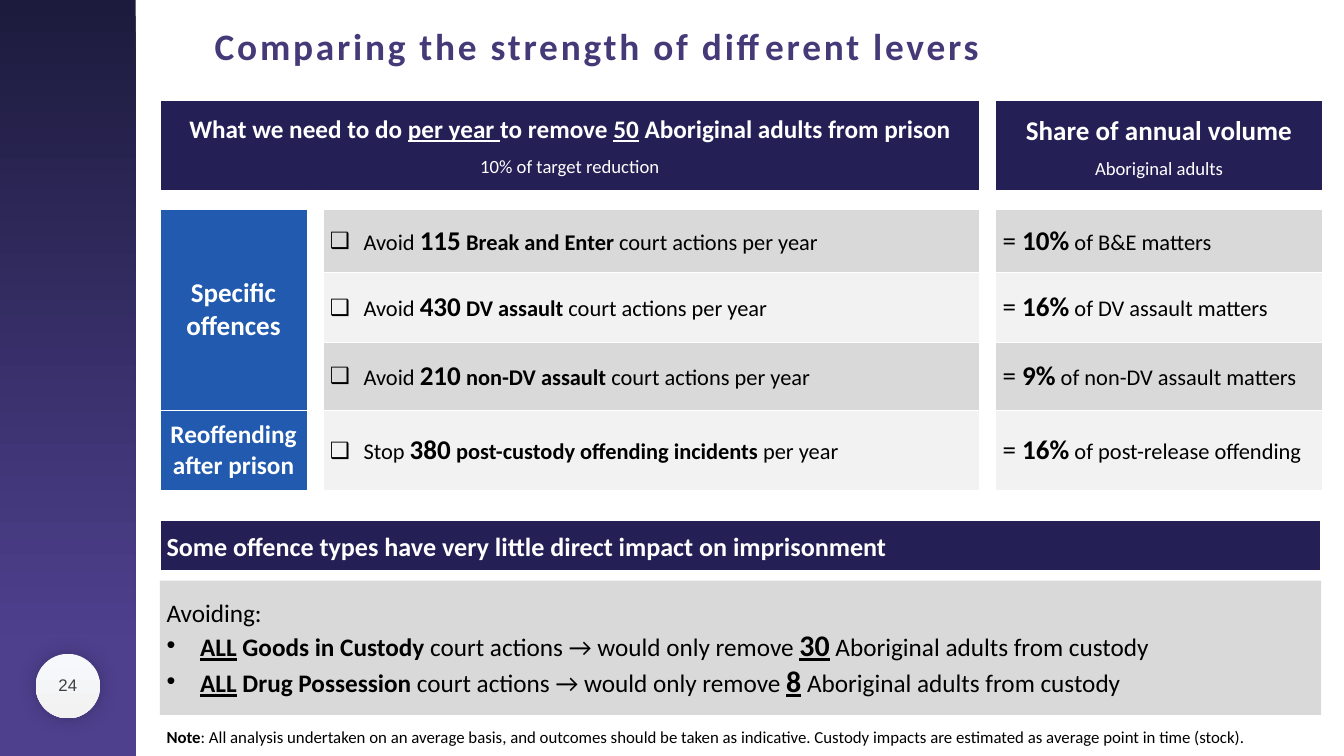
from dataclasses import dataclass
from typing import NamedTuple

import pptx
import pptx.dml.color
import pptx.enum.shapes
import pptx.enum.text
import pptx.oxml
import pptx.oxml.ns
import pptx.util
from lxml import etree

Inches, Pt = pptx.util.Inches, pptx.util.Pt
qn = pptx.oxml.ns.qn
SHAPE = pptx.enum.shapes.MSO_SHAPE
CENTER = pptx.enum.text.PP_ALIGN.CENTER
MIDDLE = pptx.enum.text.MSO_ANCHOR.MIDDLE
TOP = pptx.enum.text.MSO_ANCHOR.TOP
COLORS = {
    "navy": "241F55", "blue": "215AAF", "title": "453977", "white": "FFFFFF",
    "black": "000000", "grey": "D9D9D9", "pale": "F2F2F2", "number": "404040",
    "bar_top": "1C1B3D", "bar_bottom": "4F408E", "badge": "F6F8FC",
}
LEFT, WIDTH = 2.38, 17.28
COLUMNS = [2.19, 0.24, 9.77, 0.24, 4.86]
ROWS = [1.34, 0.27, 0.95, 1.03, 1.02, 1.19]


class Run(NamedTuple):
    text: str
    bold: bool = False
    size: float | None = None
    underline: bool = False


@dataclass
class Lever:
    verb: str
    number: str
    target: str
    ending: str
    share: str
    volume: str


@dataclass
class LowImpact:
    offence: str
    adults: str


LEVERS = [
    Lever("Avoid", "115", "Break and Enter", "court actions per year", "10%", "B&E matters"),
    Lever("Avoid", "430", "DV assault", "court actions per year", "16%", "DV assault matters"),
    Lever("Avoid", "210", "non-DV assault", "court actions per year", "9%", "non-DV assault matters"),
    Lever("Stop", "380", "post-custody offending incidents", "per year", "16%", "post-release offending"),
]
LOW_IMPACT = [LowImpact("Goods in Custody", "30"), LowImpact("Drug Possession", "8")]


def rgb(name: str):
    return pptx.dml.color.RGBColor.from_string(COLORS[name])


def write(tf, runs: list[Run], *, size: float, color: str = "black", font: str = "Calibri",
          align=None, bullet: str = "", before: float = 0, spacing: float = 0) -> None:
    """Fill the empty first paragraph, or add another one after it."""
    p = tf.paragraphs[0] if not tf.text else tf.add_paragraph()
    if bullet:
        pPr = p._p.get_or_add_pPr()
        pPr.set("marL", str(Inches(0.5)))
        pPr.set("indent", str(-Inches(0.5)))
        etree.SubElement(pPr, qn("a:buFont")).set("typeface", "Arial")
        etree.SubElement(pPr, qn("a:buChar")).set("char", bullet)
    if align is not None:
        p.alignment = align
    if before:
        p.space_before = Pt(before)
    for run in runs:
        r = p.add_run()
        r.text = run.text
        r.font.name = font
        r.font.size = Pt(run.size or size)
        r.font.bold = run.bold
        r.font.underline = run.underline
        r.font.color.rgb = rgb(color)
        if spacing:
            r._r.get_or_add_rPr().set("spc", str(int(spacing * 100)))


def add_box(s, kind, x: float, y: float, w: float, h: float, fill: str = ""):
    sp = s.shapes.add_shape(kind, Inches(x), Inches(y), Inches(w), Inches(h))
    sp.shadow.inherit = False
    sp.line.fill.background()
    if fill:
        sp.fill.solid()
        sp.fill.fore_color.rgb = rgb(fill)
    sp.text_frame.word_wrap = True
    sp.text_frame.vertical_anchor = MIDDLE
    return sp


def add_text(s, x: float, y: float, w: float, h: float, anchor=TOP):
    tf = s.shapes.add_textbox(Inches(x), Inches(y), Inches(w), Inches(h)).text_frame
    tf.word_wrap = True
    tf.vertical_anchor = anchor
    return tf


def shade(sp, top: str, bottom: str, end: float = 1) -> None:
    """Give a shape a gradient running from top to bottom."""
    sp.fill.gradient()
    sp.fill.gradient_angle = 270
    for stop, name, position in zip(sp.fill.gradient_stops, (top, bottom), (0, end)):
        stop.color.rgb = rgb(name)
        stop.position = position


def add_glow_shadow(sp) -> None:
    effects = sp._element.spPr.find(qn("a:effectLst"))
    shadow = etree.SubElement(effects, qn("a:outerShdw"), blurRad=str(Pt(22)), dist="0", dir="0")
    color = etree.SubElement(shadow, qn("a:srgbClr"), val=COLORS["black"])
    etree.SubElement(color, qn("a:alpha"), val="24000")


def style_cell(cell, fill: str, bottom: float = 1) -> None:
    """Set the fill, white borders and a small size for empty text."""
    tcPr = cell._tc.get_or_add_tcPr()
    for side in ("lnL", "lnR", "lnT", "lnB"):
        width = bottom if side == "lnB" else 1
        ln = etree.SubElement(tcPr, qn(f"a:{side}"), w=str(Pt(width)))
        solid = etree.SubElement(ln, qn("a:solidFill"))
        etree.SubElement(solid, qn("a:srgbClr"), val=COLORS["white"])
    cell.fill.solid()
    cell.fill.fore_color.rgb = rgb(fill)
    cell.vertical_anchor = MIDDLE
    etree.SubElement(cell.text_frame.paragraphs[0]._p, qn("a:endParaRPr"), sz="800")


def write_header(cell, runs: list[Run], subtitle: str, size: float) -> None:
    cell.vertical_anchor = TOP
    cell.margin_top = Inches(0.2)
    write(cell.text_frame, runs, size=size, color="white", align=CENTER)
    write(cell.text_frame, [Run(subtitle)], size=20, color="white", align=CENTER, before=11.5)


def add_lever_table(s) -> None:
    frame = s.shapes.add_table(len(ROWS), len(COLUMNS), Inches(LEFT), Inches(1.5),
                               Inches(sum(COLUMNS)), Inches(sum(ROWS)))
    table = frame.table
    table.first_row = table.horz_banding = False
    for column, width in zip(table.columns, COLUMNS):
        column.width = Inches(width)
    for row, height in zip(table.rows, ROWS):
        row.height = Inches(height)

    for i in range(len(ROWS)):
        for j in range(len(COLUMNS)):
            fill = "white"
            if i == 0 and j != 3:
                fill = "navy"
            elif i > 1 and j == 0:
                fill = "blue"
            elif i > 1 and j in (2, 4):
                fill = "pale" if i % 2 else "grey"
            style_cell(table.cell(i, j), fill, bottom=3 if i == 0 else 1)
    table.cell(0, 0).merge(table.cell(0, 2))
    for j in (0, 1, 3):
        table.cell(2, j).merge(table.cell(4, j))

    write_header(table.cell(0, 0), [
        Run("What we need to do ", True), Run("per year ", True, underline=True),
        Run("to remove ", True), Run("50", True, underline=True),
        Run(" Aboriginal adults from prison", True)], "10% of target reduction", 27)
    write_header(table.cell(0, 4), [Run("Share of annual volume", True)], "Aboriginal adults", 29)
    for i, label, size in ((2, "Specific offences", 29), (5, "Reoffending after prison", 27)):
        write(table.cell(i, 0).text_frame, [Run(label, True)], size=size, color="white", align=CENTER)
    for i, lever in enumerate(LEVERS, start=2):
        write(table.cell(i, 2).text_frame, [
            Run(f"{lever.verb} "), Run(lever.number, True, 29),
            Run(f" {lever.target} ", True), Run(lever.ending)], size=24, bullet="❑")
        write(table.cell(i, 4).text_frame, [
            Run("= ", size=29), Run(lever.share, True, 29), Run(f" of {lever.volume}")], size=24)


def main() -> None:
    prs = pptx.Presentation()
    prs.slide_width, prs.slide_height = Inches(20), Inches(11.25)
    s = prs.slides.add_slide(prs.slide_layouts[6])

    shade(add_box(s, SHAPE.RECTANGLE, 0, 0, 2.02, 11.25), "bar_top", "bar_bottom", 0.86)
    badge = add_box(s, SHAPE.OVAL, 0.53, 9.73, 0.96, 0.96)
    shade(badge, "badge", "pale")
    add_glow_shadow(badge)
    write(add_text(s, 0.53, 9.8, 0.96, 0.78, MIDDLE), [Run("24")],
          size=18, color="number", font="Arial", align=CENTER)

    note = add_box(s, SHAPE.RECTANGLE, LEFT, 10.77, WIDTH, 0.38, "white")
    write(note.text_frame, [Run("Note", True), Run(
        ": All analysis undertaken on an average basis, and outcomes should be taken as indicative. "
        "Custody impacts are estimated as average point in time (stock).")], size=18)
    write(add_text(s, LEFT, 0.29, 13.02, 0.77), [Run("Comparing the strength of different levers", True)],
          size=40, color="title", align=CENTER, spacing=3)
    add_lever_table(s)

    impact = add_box(s, SHAPE.RECTANGLE, LEFT, 8.64, WIDTH, 2, "grey").text_frame
    write(impact, [Run("Avoiding:")], size=27)
    for item in LOW_IMPACT:
        write(impact, [
            Run("ALL", True, underline=True), Run(f" {item.offence} ", True),
            Run("court actions → would only remove "), Run(item.adults, True, 32, True),
            Run(" Aboriginal adults from custody")], size=27, bullet="•")
    banner = add_box(s, SHAPE.RECTANGLE, LEFT, 7.74, WIDTH, 0.76, "navy")
    banner.line.color.rgb = rgb("white")
    banner.line.width = Pt(1.5)
    write(banner.text_frame, [Run("Some offence types have very little direct impact on imprisonment", True)],
          size=28, color="white", align=pptx.enum.text.PP_ALIGN.LEFT)
    for tf in (note.text_frame, impact):
        for p in tf.paragraphs:
            p.alignment = pptx.enum.text.PP_ALIGN.LEFT
    prs.save("out.pptx")


if __name__ == "__main__":
    main()
